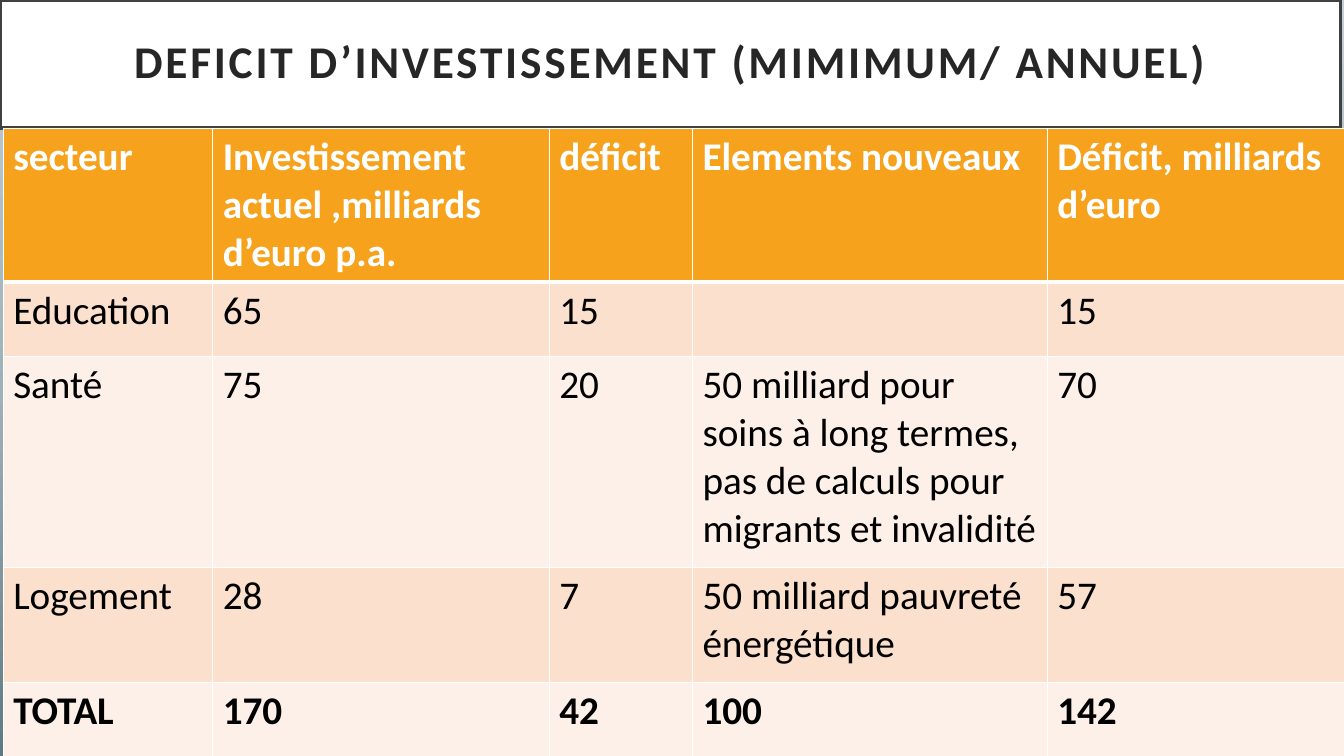
from dataclasses import dataclass
from typing import Any

from lxml.etree import SubElement
from pptx import Presentation
from pptx.dml.color import RGBColor
from pptx.enum.text import MSO_ANCHOR, PP_ALIGN
from pptx.oxml import parse_xml
from pptx.oxml.ns import nsdecls, qn
from pptx.util import Cm, Pt


@dataclass
class Row:
    height: float
    fill: str
    color: str
    bold: bool
    texts: list[str]


WIDTHS = [5.28, 8.48, 3.61, 8.94, 7.98]
DARK, LIGHT = "FBE0CD", "FDF0E8"
ROWS = [
    Row(3.68, "F6A21D", "FFFFFF", True,
        ["secteur", "Investissement actuel ,milliards d’euro p.a.", "déficit",
         "Elements nouveaux", "Déficit, milliards d’euro"]),
    Row(1.88, DARK, "000000", False, ["Education", "65", "15", "", "15"]),
    Row(5.31, LIGHT, "000000", False,
        ["Santé", "75", "20",
         "50 milliard pour soins à long termes, pas de calculs pour migrants et invalidité",
         "70"]),
    Row(2.9, DARK, "000000", False,
        ["Logement", "28", "7", "50 milliard pauvreté énergétique", "57"]),
    Row(2.69, LIGHT, "000000", True, ["TOTAL", "170", "42", "100", "142"]),
]
STOPS = [(0, "607A81"), (48, "9EB1B7"), (100, "C3CFD3")]


def rgb(code: str) -> RGBColor:
    return RGBColor.from_string(code)


def apply(target: Any, values: dict[str, Any]) -> None:
    for name, value in values.items():
        setattr(target, name, value)


def write(frame: Any, text: str, size: float, color: str, bold: bool) -> Any:
    run = frame.paragraphs[0].add_run()
    run.text = text
    apply(run.font, {"name": "Calibri", "size": Pt(size), "bold": bold})
    run.font.color.rgb = rgb(color)
    return run


def paint(slide: Any) -> None:
    fill = slide.background.fill
    fill.gradient()
    fill.gradient_angle = 90
    grad = slide.element.find(".//" + qn("a:gradFill"))
    stops = grad.find(qn("a:gsLst"))
    for old in list(stops):
        stops.remove(old)
    for place, code in STOPS:
        stop = SubElement(stops, qn("a:gs"), pos=str(place * 1000))
        SubElement(stop, qn("a:srgbClr"), val=code)


def head(slide: Any) -> None:
    title = slide.shapes.title
    apply(title, {"left": 0, "top": 0, "width": Cm(33.78), "height": Cm(3.23)})
    title.fill.solid()
    title.fill.fore_color.rgb = rgb("FFFFFF")
    title.line.color.rgb = rgb("404040")
    title.line.width = Pt(2.5)
    frame = title.text_frame
    sides = ("left", "top", "right", "bottom")
    apply(frame, {f"margin_{side}": Cm(0.51) for side in sides})
    apply(frame, {"word_wrap": True, "vertical_anchor": MSO_ANCHOR.MIDDLE})
    apply(frame.paragraphs[0], {"alignment": PP_ALIGN.CENTER, "line_spacing": 0.9})
    run = write(frame, "DEFICIT D’INVESTISSEMENT (MIMIMUM/ ANNUEL)", 32.4, "262626", True)
    run.font._element.set("spc", "200")


def edge(cell: Any, top: float, bottom: float) -> None:
    props = cell._tc.get_or_add_tcPr()
    sides = {"L": 1, "R": 1, "T": top, "B": bottom}
    for place, (side, width) in enumerate(sides.items()):
        props.insert(place, parse_xml(
            f'<a:ln{side} {nsdecls("a")} w="{Pt(width)}"><a:solidFill>'
            f'<a:srgbClr val="FFFFFF"/></a:solidFill></a:ln{side}>'))


def grid(slide: Any) -> None:
    table = slide.shapes.add_table(
        len(ROWS), len(WIDTHS), Cm(0.08), Cm(3.23),
        Cm(sum(WIDTHS)), Cm(sum(row.height for row in ROWS))).table
    for column, width in zip(table.columns, WIDTHS):
        column.width = Cm(width)
    for place, row in enumerate(ROWS):
        table.rows[place].height = Cm(row.height)
        for cell, text in zip(table.rows[place].cells, row.texts):
            cell.fill.solid()
            cell.fill.fore_color.rgb = rgb(row.fill)
            edge(cell, 3 if place == 1 else 1, 3 if place == 0 else 1)
            if text:
                write(cell.text_frame, text, 28, row.color, row.bold)


def main() -> None:
    deck = Presentation()
    apply(deck, {"slide_width": Cm(33.87), "slide_height": Cm(19.05)})
    slide = deck.slides.add_slide(deck.slide_layouts[5])
    paint(slide)
    head(slide)
    grid(slide)
    deck.save("out.pptx")


if __name__ == "__main__":
    main()
